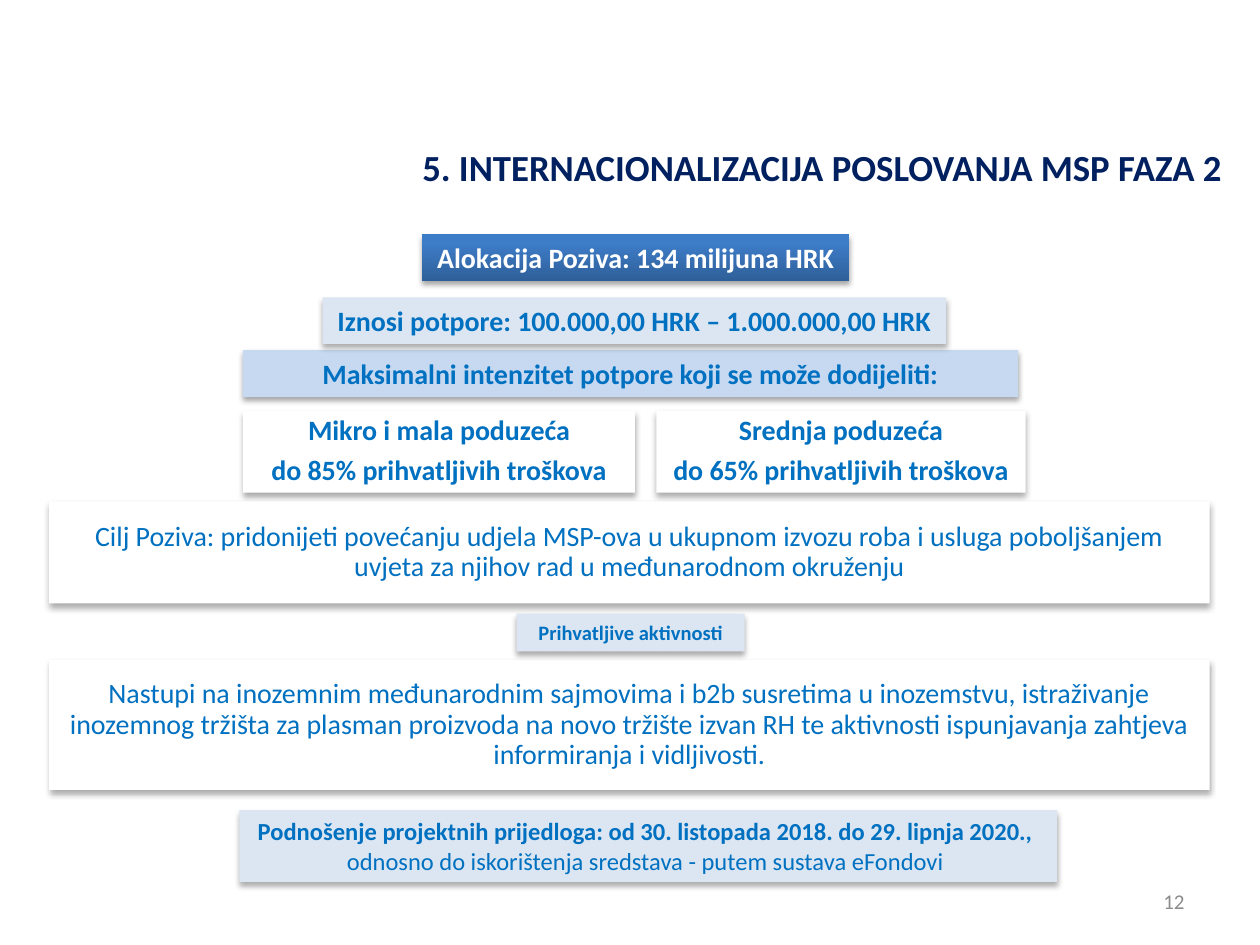
from dataclasses import dataclass

from lxml.etree import SubElement
from pptx import Presentation
from pptx.dml.color import RGBColor
from pptx.enum.shapes import MSO_SHAPE
from pptx.enum.text import MSO_ANCHOR, MSO_AUTO_SIZE, PP_ALIGN
from pptx.oxml.ns import qn
from pptx.util import Inches, Pt

COLUMN = ROW = Inches(0.1)
COLUMNS, ROWS = 100, 75


@dataclass(frozen=True)
class Theme:
    font: str = "Calibri"
    navy: str = "002060"
    blue: str = "0070C0"
    white: str = "FFFFFF"
    pale: str = "DCE6F2"
    light: str = "C6D9F1"
    grey: str = "8C8C8C"
    gradient: tuple = (("2F5F99", 0), ("3D7CC7", 0.8))
    title: float = 21
    body: float = 16
    deadline: float = 14
    label: float = 11.7
    number: float = 12


THEME = Theme()


@dataclass(frozen=True)
class Box:
    column: float
    row: float
    columns: float
    rows: float

    def area(self, column, row, columns, rows):
        return Box(self.column + column, self.row + row, columns, rows)

    def lengths(self):
        return (int(self.column * COLUMN), int(self.row * ROW),
                int(self.columns * COLUMN), int(self.rows * ROW))


def write(shape, *lines, size=THEME.body, color=THEME.blue, bold=(True,),
          align=PP_ALIGN.CENTER, anchor=MSO_ANCHOR.TOP, spacing=None, after=0):
    frame = shape.text_frame
    frame.auto_size = MSO_AUTO_SIZE.NONE
    frame.word_wrap = True
    frame.vertical_anchor = anchor
    for index, line in enumerate(lines):
        paragraph = frame.paragraphs[0] if index == 0 else frame.add_paragraph()
        paragraph.alignment = align
        paragraph.line_spacing = spacing
        paragraph.space_before = Pt(0)
        paragraph.space_after = Pt(after)
        run = paragraph.add_run()
        run.text = line
        run.font.name = THEME.font
        run.font.size = Pt(size)
        run.font.bold = bold[index % len(bold)]
        run.font.color.rgb = RGBColor.from_string(color)


def cast_shadow(shape, blur, distance, opacity):
    shape.shadow.inherit = False
    effects = shape._element.spPr.find(qn("a:effectLst"))
    shadow = SubElement(effects, qn("a:outerShdw"), blurRad=str(Pt(blur)),
                        dist=str(Pt(distance)), dir="5400000", rotWithShape="0")
    black = SubElement(shadow, qn("a:srgbClr"), val="000000")
    SubElement(black, qn("a:alpha"), val=str(opacity * 1000))


def add_panel(slide, box, *lines, fill=THEME.white, shadow=(3.5, 2.2, 32), **text):
    panel = slide.shapes.add_shape(MSO_SHAPE.RECTANGLE, *box.lengths())
    panel.line.fill.background()
    if isinstance(fill, tuple):
        panel.fill.gradient()
        panel.fill.gradient_angle = 90
        for stop, (color, position) in zip(panel.fill.gradient_stops, fill):
            stop.color.rgb = RGBColor.from_string(color)
            stop.position = position
    else:
        panel.fill.solid()
        panel.fill.fore_color.rgb = RGBColor.from_string(fill)
    cast_shadow(panel, *shadow)
    write(panel, *lines, **text)


def add_card(slide, box, *lines, **text):
    add_panel(slide, box, *lines, anchor=MSO_ANCHOR.MIDDLE,
              spacing=0.9, after=5.6, **text)


def add_heading(slide, box):
    title = slide.shapes.title
    title.left, title.top, title.width, title.height = box.lengths()
    write(title, "5. INTERNACIONALIZACIJA POSLOVANJA MSP FAZA 2",
          size=THEME.title, color=THEME.navy, align=PP_ALIGN.RIGHT, spacing=1.15)


def add_support(slide, box):
    soft = (3.1, 1.8, 35)
    add_panel(slide, box.area(14.2, 0, 33.9, 3.7), "Alokacija Poziva: 134 milijuna HRK",
              fill=THEME.gradient, shadow=soft, color=THEME.white)
    add_panel(slide, box.area(0, 9.2, 61.5, 3.7),
              "Maksimalni intenzitet potpore koji se može dodijeliti:",
              fill=THEME.light, shadow=soft)
    add_panel(slide, box.area(6.3, 5, 49.5, 3.7),
              "Iznosi potpore: 100.000,00 HRK – 1.000.000,00 HRK", fill=THEME.pale)
    add_card(slide, box.area(0, 14, 31.1, 6.5),
             "Mikro i mala poduzeća", "do 85% prihvatljivih troškova")
    add_card(slide, box.area(32.8, 14, 29.3, 6.5),
             "Srednja poduzeća", "do 65% prihvatljivih troškova")


def add_purpose(slide, box):
    add_card(slide, box.area(0, 0, box.columns, 8.1),
             "Cilj Poziva: pridonijeti povećanju udjela MSP-ova u ukupnom izvozu roba "
             "i usluga poboljšanjem uvjeta za njihov rad u međunarodnom okruženju",
             bold=(False,))
    add_card(slide, box.area(0, 12.6, box.columns, 10.3),
             "Nastupi na inozemnim međunarodnim sajmovima i b2b susretima u inozemstvu, "
             "istraživanje inozemnog tržišta za plasman proizvoda na novo tržište izvan RH "
             "te aktivnosti ispunjavanja zahtjeva informiranja i vidljivosti.",
             bold=(False,))
    add_panel(slide, box.area(37.1, 8.9, 18.1, 3), "Prihvatljive aktivnosti",
              fill=THEME.pale, size=THEME.label)


def add_deadline(slide, box):
    add_panel(slide, box,
              "Podnošenje projektnih prijedloga: od 30. listopada 2018. do 29. lipnja 2020., ",
              "odnosno do iskorištenja sredstava - putem sustava eFondovi ",
              fill=THEME.pale, size=THEME.deadline, bold=(True, False))


def add_page_number(slide, box):
    write(slide.shapes.add_textbox(*box.lengths()), "12", size=THEME.number,
          color=THEME.grey, bold=(False,), align=PP_ALIGN.RIGHT, anchor=MSO_ANCHOR.MIDDLE)


def main():
    deck = Presentation()
    deck.slide_width, deck.slide_height = COLUMNS * COLUMN, ROWS * ROW
    slide = deck.slides.add_slide(deck.slide_layouts.get_by_name("Title Only"))
    add_heading(slide, Box(31.9, 10.5, 66.1, 4.8))
    add_support(slide, Box(19.3, 18.6, 62.1, 20.5))
    add_purpose(slide, Box(3.9, 39.8, 92.1, 22.9))
    add_deadline(slide, Box(19, 64.3, 64.9, 5.7))
    add_page_number(slide, Box(71.7, 69.5, 23.3, 4))
    deck.save("out.pptx")


if __name__ == "__main__":
    main()
